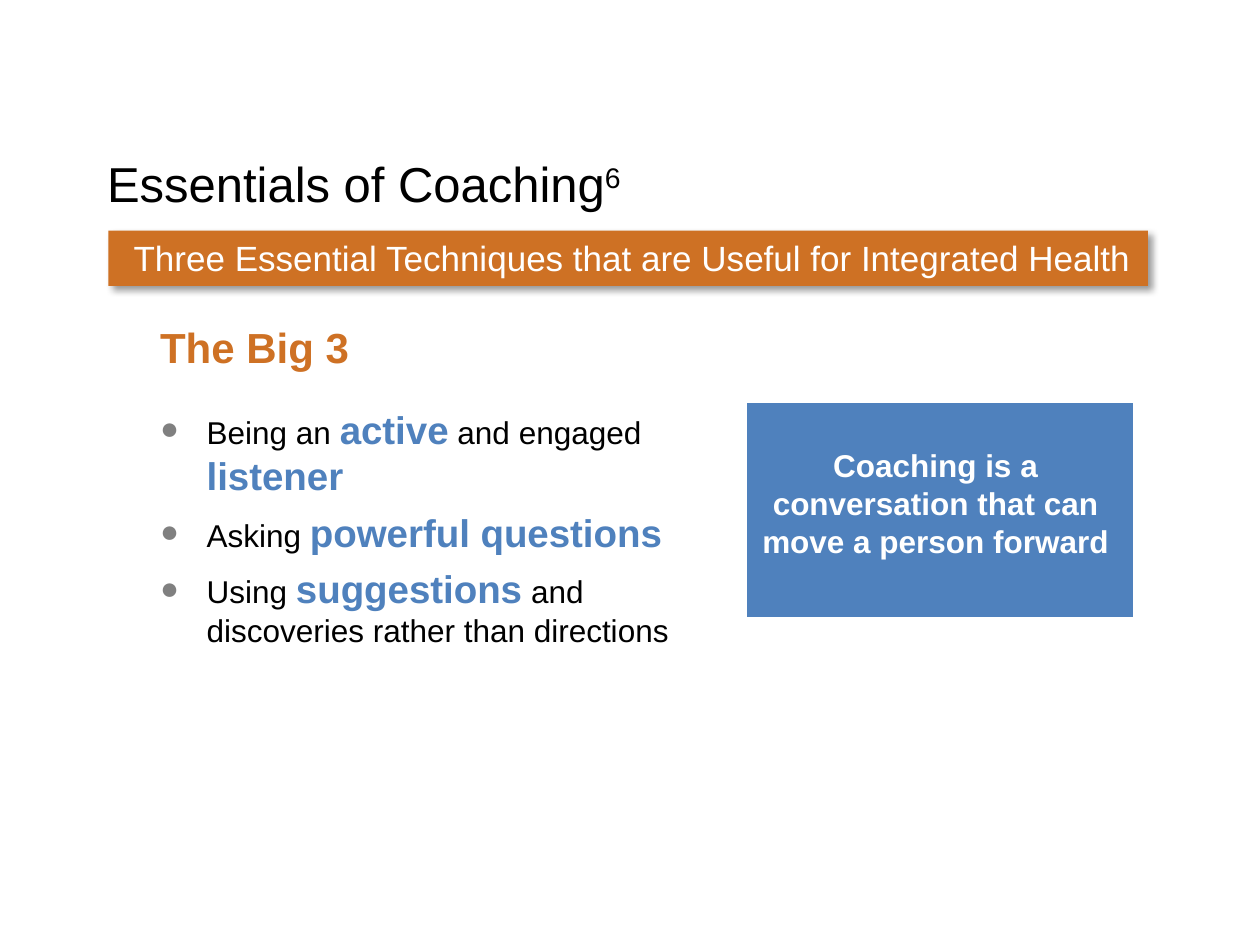
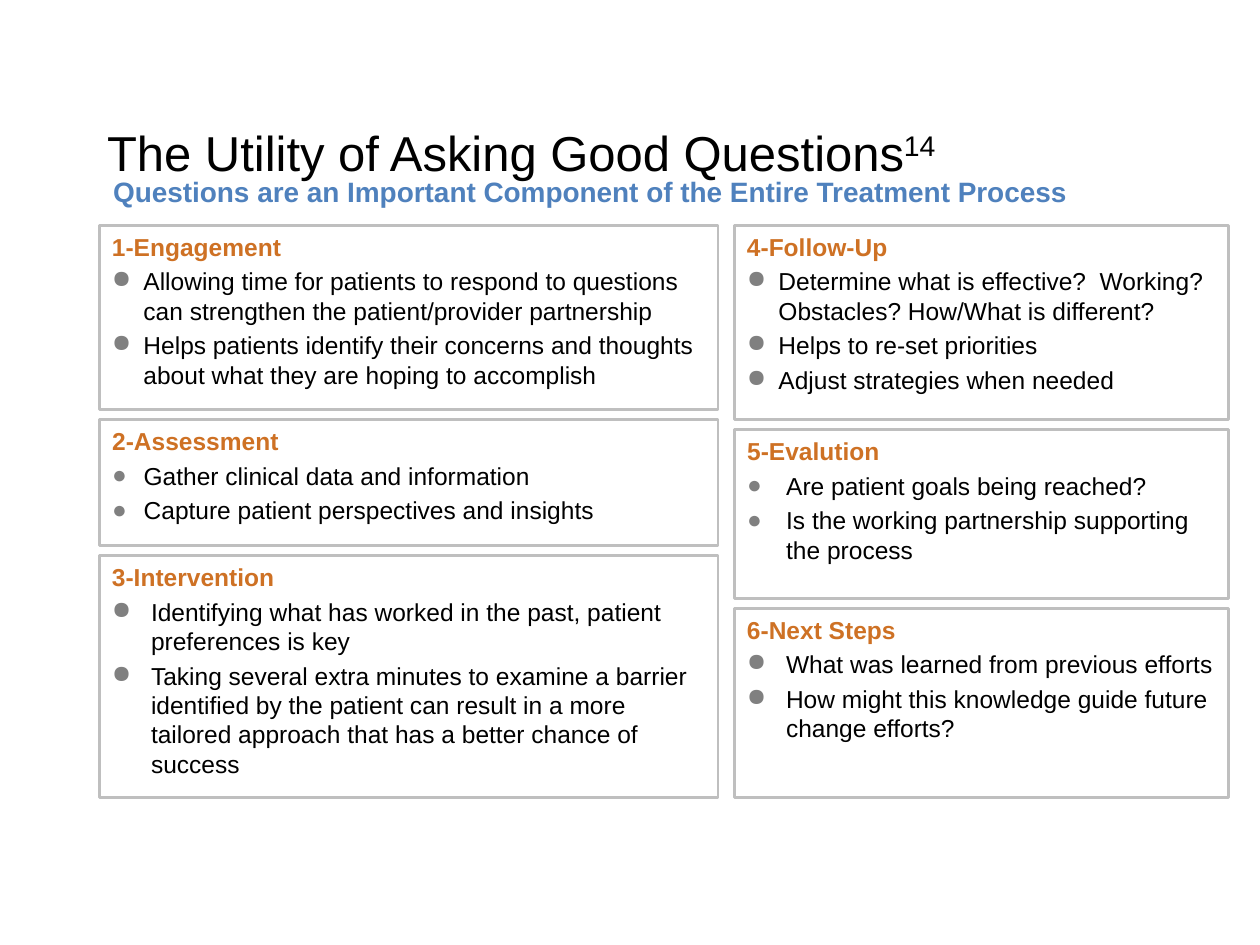
from dataclasses import dataclass
from typing import NamedTuple

from lxml import etree
from pptx import Presentation
from pptx.dml.color import RGBColor
from pptx.enum import shapes, text
from pptx.oxml import ns
from pptx.util import Emu, Pt

SCALE = 9144
TITLE_AND_TWO_BODIES = 3


@dataclass(frozen=True)
class Theme:
    font: str = "Arial"
    ink: str = "000000"
    paper: str = "FFFFFF"
    orange: str = "CE7124"
    blue: str = "4F81BD"
    bullet: str = "808080"
    border: str = "BFBFBF"
    title: int = 28
    heading: int = 24
    emphasis: int = 22
    band: int = 20
    body: int = 18
    subtitle: int = 16
    card: int = 14
    border_width: float = 1.5
    line_spacing: float = 1.0


THEME = Theme()


class Area(NamedTuple):
    left: int
    top: int
    width: int
    height: int


class Style(NamedTuple):
    size: int
    color: str
    bold: bool = False


class Span(NamedTuple):
    content: str
    strong: bool = False


class Card(NamedTuple):
    heading: str
    points: list[str]
    height: int
    indent: int
    placeholder: int = 0


class Column(NamedTuple):
    left: int
    width: int
    cards: list[Card]


TECHNIQUES = [
    [Span("Being an "), Span("active", True), Span(" and engaged "), Span("listener", True)],
    [Span("Asking "), Span("powerful questions", True)],
    [Span("Using "), Span("suggestions", True), Span(" and discoveries rather than directions")],
]

CARDS_TOP = 179
CARD_GAP = 8
COLUMNS = [
    Column(79, 491, [
        Card("1-Engagement", [
            "Allowing time for patients to respond to questions can strengthen "
            "the patient/provider partnership",
            "Helps patients identify their concerns and thoughts about what they "
            "are hoping to accomplish",
        ], 146, 25),
        Card("2-Assessment", [
            "Gather clinical data and information",
            "Capture patient perspectives and insights",
        ], 100, 25, 1),
        Card("3-Intervention", [
            "Identifying what has worked in the past, patient preferences is key",
            "Taking several extra minutes to examine a barrier identified by the "
            "patient can result in a more tailored approach that has a better "
            "chance of success",
        ], 192, 31),
    ]),
    Column(583, 392, [
        Card("4-Follow-Up", [
            "Determine what is effective?  Working? Obstacles? How/What is different?",
            "Helps to re-set priorities",
            "Adjust strategies when needed",
        ], 154, 25),
        Card("5-Evalution", [
            "Are patient goals being reached?",
            "Is the working partnership supporting the process",
        ], 134, 31, 2),
        Card("6-Next Steps", [
            "What was learned from previous efforts",
            "How might this knowledge guide future change efforts?",
        ], 150, 31),
    ]),
]


def px(length: int) -> Emu:
    return Emu(length * SCALE)


def rgb(color: str) -> RGBColor:
    return RGBColor.from_string(color)


def add_element(parent, tag: str, **attributes: str):
    return etree.SubElement(parent, ns.qn(tag), attributes)


def place(box, area: Area) -> None:
    box.left, box.top, box.width, box.height = map(px, area)


def prepare_frame(box, left: int = 10, top: int = 5, right: int = 10):
    frame = box.text_frame
    frame.word_wrap = True
    frame.auto_size = text.MSO_AUTO_SIZE.NONE
    frame.vertical_anchor = text.MSO_ANCHOR.TOP
    frame.margin_left, frame.margin_top = px(left), px(top)
    frame.margin_right, frame.margin_bottom = px(right), px(5)
    return frame


def set_font(font, style: Style) -> None:
    font.name = THEME.font
    font.size = Pt(style.size)
    font.bold = style.bold
    font.color.rgb = rgb(style.color)


def format_para(para, style: Style, bullet_left: int = 0, indent: int = 0,
                before: int = 0, align=text.PP_ALIGN.LEFT) -> None:
    properties = para._p.get_or_add_pPr()
    properties.set("marL", str(px(bullet_left + indent)))
    properties.set("indent", str(px(-indent)))
    if indent:
        color = add_element(properties, "a:buClr")
        add_element(color, "a:srgbClr", val=THEME.bullet)
        add_element(properties, "a:buChar", char="●")
    else:
        add_element(properties, "a:buNone")
    para.alignment = align
    para.line_spacing = THEME.line_spacing
    para.space_before = Pt(before)
    para.space_after = Pt(0)
    set_font(para.font, style)


def add_panel(page, area: Area, fill: str | None = None, line: str | None = None):
    box = page.shapes.add_shape(shapes.MSO_SHAPE.RECTANGLE, *map(px, area))
    box.shadow.inherit = False
    paint(box, fill, line)
    return box


def paint(box, fill: str | None, line: str | None) -> None:
    if fill:
        box.fill.solid()
        box.fill.fore_color.rgb = rgb(fill)
    else:
        box.fill.background()
    if line:
        box.line.color.rgb = rgb(line)
        box.line.width = Pt(THEME.border_width)
    else:
        box.line.fill.background()


def add_shadow(box) -> None:
    effects = box._element.spPr.find(ns.qn("a:effectLst"))
    shadow = add_element(effects, "a:outerShdw", blurRad=str(Pt(4)), dist=str(Pt(3)),
                         dir="2700000", algn="tl", rotWithShape="0")
    color = add_element(shadow, "a:srgbClr", val=THEME.ink)
    add_element(color, "a:alpha", val="40000")


def add_page(deck, title: str, reference: str, top: int):
    page = deck.slides.add_slide(deck.slide_layouts[TITLE_AND_TWO_BODIES])
    box = page.shapes.title
    place(box, Area(75, top, 875, 92))
    para = prepare_frame(box).paragraphs[0]
    format_para(para, Style(THEME.title, THEME.ink))
    para.add_run().text = title
    note = para.add_run()
    note.text = reference
    note._r.get_or_add_rPr().set("baseline", "30000")
    return page


def write_line(box, content: str, style: Style, align=text.PP_ALIGN.LEFT, **margins: int) -> None:
    para = prepare_frame(box, **margins).paragraphs[0]
    format_para(para, style, align=align)
    para.text = content


def write_techniques(box) -> None:
    frame = prepare_frame(box)
    for number, spans in enumerate(TECHNIQUES):
        para = frame.add_paragraph() if number else frame.paragraphs[0]
        format_para(para, Style(THEME.body, THEME.ink), 25, 37, 6 if number else 0)
        for span in spans:
            run = para.add_run()
            run.text = span.content
            if span.strong:
                set_font(run.font, Style(THEME.emphasis, THEME.blue, True))


def draw_card(page, card: Card, area: Area) -> None:
    if card.placeholder:
        box = page.placeholders[card.placeholder]
        place(box, area)
        paint(box, None, THEME.border)
    else:
        box = add_panel(page, area, line=THEME.border)
    write_line(box, card.heading, Style(THEME.card, THEME.orange, True))
    for point in card.points:
        para = box.text_frame.add_paragraph()
        format_para(para, Style(THEME.card, THEME.ink), indent=card.indent, before=3)
        run = para.add_run()
        run.text = point
        run.font.size = Pt(THEME.card)


def build_essentials(deck) -> None:
    page = add_page(deck, "Essentials of Coaching", "6", 117)
    heading, techniques = page.placeholders[1], page.placeholders[2]
    place(heading, Area(117, 250, 392, 51))
    write_line(heading, "The Big 3", Style(THEME.heading, THEME.orange, True))
    place(techniques, Area(92, 317, 483, 205))
    write_techniques(techniques)

    quote = add_panel(page, Area(592, 319, 308, 172), THEME.blue, THEME.paper)
    write_line(quote, "Coaching is a\vconversation that can\vmove a person forward",
               Style(THEME.body, THEME.paper, True), text.PP_ALIGN.CENTER,
               left=0, top=35, right=7)

    band = add_panel(page, Area(86, 183, 825, 44), THEME.orange)
    add_shadow(band)
    write_line(band, "Three Essential Techniques that are Useful for Integrated Health",
               Style(THEME.band, THEME.paper), left=20)


def build_questions(deck) -> None:
    page = add_page(deck, "The Utility of Asking Good Questions", "14", 92)
    subtitle = page.shapes.add_textbox(*map(px, Area(80, 134, 854, 37)))
    write_line(subtitle, "Questions are an Important Component of the Entire Treatment Process",
               Style(THEME.subtitle, THEME.blue, True))
    for column in COLUMNS:
        top = CARDS_TOP
        for card in column.cards:
            draw_card(page, card, Area(column.left, top, column.width, card.height))
            top += card.height + CARD_GAP


def main() -> None:
    deck = Presentation()
    deck.slide_width, deck.slide_height = px(1000), px(750)
    build_essentials(deck)
    build_questions(deck)
    deck.save("out.pptx")


if __name__ == "__main__":
    main()
